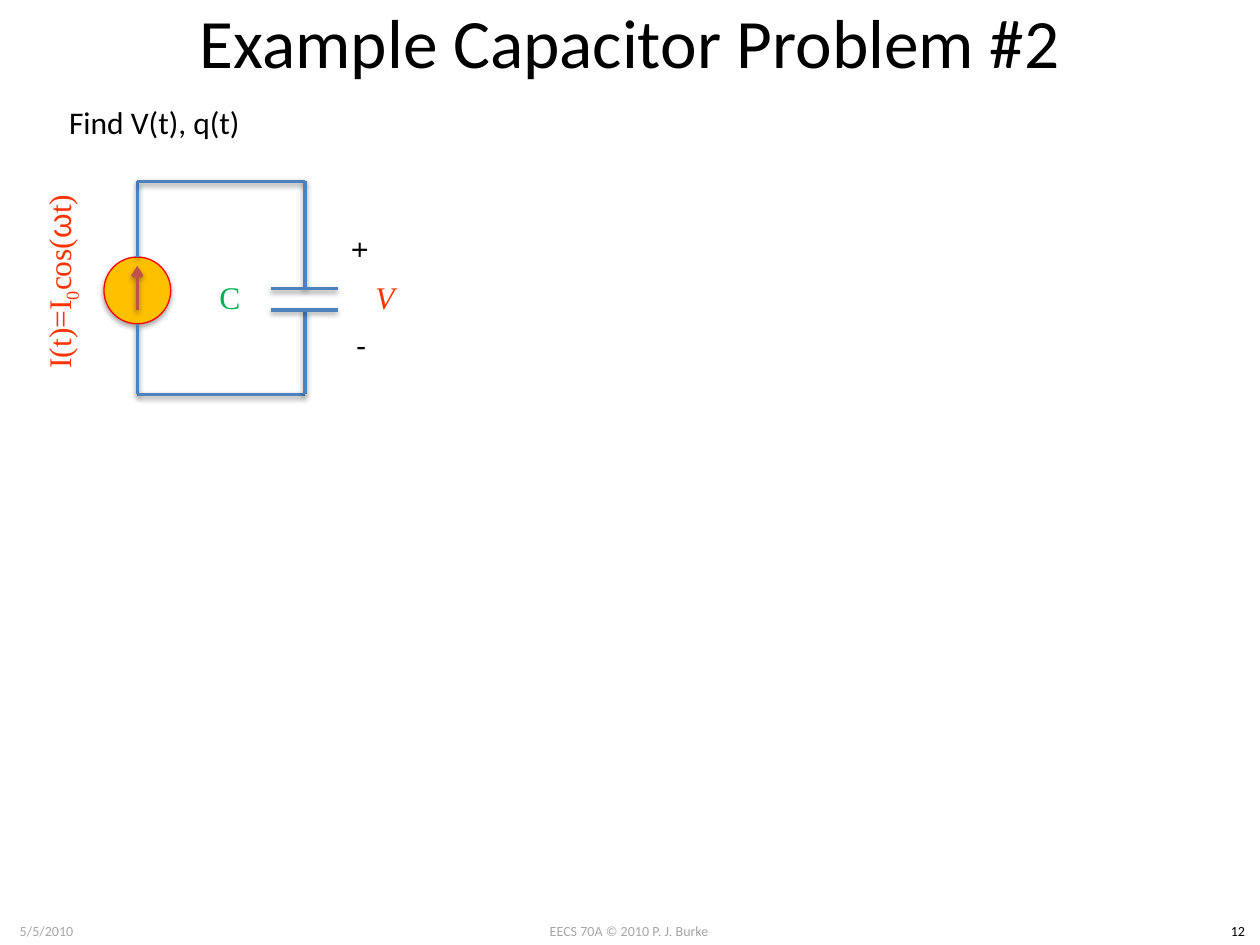
from lxml import etree
from pptx import Presentation
from pptx.dml.color import RGBColor
from pptx.enum.shapes import MSO_CONNECTOR, MSO_SHAPE
from pptx.enum.text import MSO_ANCHOR, PP_ALIGN
from pptx.oxml.ns import qn
from pptx.util import Inches, Pt

STRAIGHT, ELLIPSE = MSO_CONNECTOR.STRAIGHT, MSO_SHAPE.OVAL
LEFT, CENTER = PP_ALIGN.LEFT, PP_ALIGN.CENTER
TOP, MIDDLE = MSO_ANCHOR.TOP, MSO_ANCHOR.MIDDLE
BLACK = RGBColor(0x00, 0x00, 0x00)
GRAY = RGBColor(0xA6, 0xA6, 0xA6)
BLUE = RGBColor(0x4F, 0x81, 0xBD)
BRICK = RGBColor(0xC0, 0x50, 0x4D)
AMBER = RGBColor(0xFF, 0xC0, 0x00)
RED = RGBColor(0xFF, 0x00, 0x00)
ORANGE = RGBColor(0xFF, 0x33, 0x00)
GREEN = RGBColor(0x00, 0xB0, 0x50)
SANS, SERIF, SYMBOL = "Calibri", "Times New Roman", "Arial"


def add_shadow(sp, alpha, dist):
    """Give a shape or connector a soft shadow falling downwards."""
    effects = etree.SubElement(sp._element.spPr, qn("a:effectLst"))
    shadow = etree.SubElement(effects, qn("a:outerShdw"), blurRad=str(Pt(3.1)),
                              dist=str(Pt(dist)), dir="5400000", rotWithShape="0")
    color = etree.SubElement(shadow, qn("a:srgbClr"), val=str(BLACK))
    etree.SubElement(color, qn("a:alpha"), val=str(alpha * 1000))


def add_wire(s, x1, y1, x2, y2, color=BLUE, arrow=False):
    """Draw one shadowed wire, optionally ending in an arrowhead."""
    line = s.shapes.add_connector(STRAIGHT, Inches(x1), Inches(y1), Inches(x2), Inches(y2))
    line.line.color.rgb = color
    line.line.width = Pt(2)
    if arrow:
        etree.SubElement(line.line._get_or_add_ln(), qn("a:tailEnd"), type="arrow")
    add_shadow(line, 38, 1.6)


def add_label(s, box, runs, size=18, font=SANS, color=BLACK, align=CENTER,
              anchor=MIDDLE, wrap=True, rotation=0):
    """Add a one-paragraph text box and return its paragraph."""
    sp = s.shapes.add_textbox(*map(Inches, box))
    sp.rotation = rotation
    tf = sp.text_frame
    tf.word_wrap = wrap
    tf.vertical_anchor = anchor
    p = tf.paragraphs[0]
    p.alignment = align
    for text in runs:
        r = p.add_run()
        r.text = text
        r.font.size = Pt(size)
        r.font.name = font
        r.font.color.rgb = color
    return p


def add_heading(s, x, y, w, h):
    """Fill the title placeholder and state the task below it."""
    title = s.shapes.title
    title.left, title.top, title.width, title.height = map(Inches, (x, y, w, h))
    title.text_frame.vertical_anchor = MIDDLE
    p = title.text_frame.paragraphs[0]
    p.text = "Example Capacitor Problem #2"
    p.alignment = CENTER
    p.font.size = Pt(39.6)
    p.font.name = SANS
    p.font.color.rgb = BLACK
    add_label(s, (x - 0.05, y + 0.77, 1.57, 0.4), ["Find V(t), q(t)"],
              align=LEFT, anchor=TOP, wrap=False)


def add_source(s, x, top, bottom):
    """Draw the current source in the left branch, with its label."""
    size, y = 0.53, top + 0.6
    circle = s.shapes.add_shape(ELLIPSE, Inches(x - size / 2), Inches(y),
                                Inches(size), Inches(size))
    circle.fill.solid()
    circle.fill.fore_color.rgb = AMBER
    circle.line.color.rgb = RED
    circle.line.width = Pt(0.75)
    add_shadow(circle, 35, 1.8)
    add_wire(s, x, y + 0.42, x, y + 0.07, BRICK, arrow=True)
    add_wire(s, x, y, x, top)
    add_wire(s, x, y + size, x, bottom)

    p = add_label(s, (x - 1.66, top + 0.49, 2.11, 0.61),
                  ["I(t)=I", "0", "cos(", "ω", "t)"],
                  font=SERIF, color=ORANGE, rotation=270)
    p.runs[1]._r.get_or_add_rPr().set("baseline", "-25000")
    p.runs[3].font.name = SYMBOL


def add_capacitor(s, x, top, bottom):
    """Draw the capacitor in the right branch, with its labels."""
    upper, lower = top + 0.85, top + 1.02
    add_wire(s, x, top, x, upper)
    add_wire(s, x, lower, x, bottom)
    for plate in (upper, lower):
        add_wire(s, x + 0.26, plate, x - 0.27, plate)

    add_label(s, (x - 1.19, top + 0.55, 1.19, 0.73), ["C"], font=SERIF, color=GREEN)
    v = add_label(s, (x + 0.25, top + 0.61, 0.77, 0.61), ["V"], font=SERIF, color=ORANGE)
    v.runs[0].font.italic = True
    add_label(s, (x + 0.29, top + 0.35, 0.33, 0.4), ["+"], align=LEFT,
              anchor=TOP, wrap=False, rotation=90)
    add_label(s, (x + 0.31, top + 1.1, 0.28, 0.4), ["-"], align=LEFT,
              anchor=TOP, wrap=False)


def add_circuit(s, x, y, w, h):
    """Draw the loop of source and capacitor inside the box."""
    add_source(s, x, y, y + h)
    for rail in (y, y + h):
        add_wire(s, x, rail, x + w, rail)
    add_capacitor(s, x + w, y, y + h)


def add_footer(s, y, h):
    """Add the date, course and page number along the bottom edge."""
    for x, w, text, color in ((3.83, 2.33, "EECS 70A © 2010 P. J. Burke", GRAY),
                              (0, 0.74, "5/5/2010", GRAY),
                              (9.65, 0.35, "12", BLACK)):
        add_label(s, (x, y, w, h), [text], size=8, color=color, anchor=TOP, wrap=False)


def main():
    """Build the slide and save it."""
    prs = Presentation()
    prs.slide_width, prs.slide_height = Inches(10), Inches(7.5)
    s = prs.slides.add_slide(prs.slide_layouts[5])
    add_footer(s, 7.27, 0.24)
    add_heading(s, 0.5, 0, 9, 0.65)
    add_circuit(s, 1.09, 1.44, 1.33, 1.69)
    prs.save("out.pptx")


if __name__ == "__main__":
    main()
